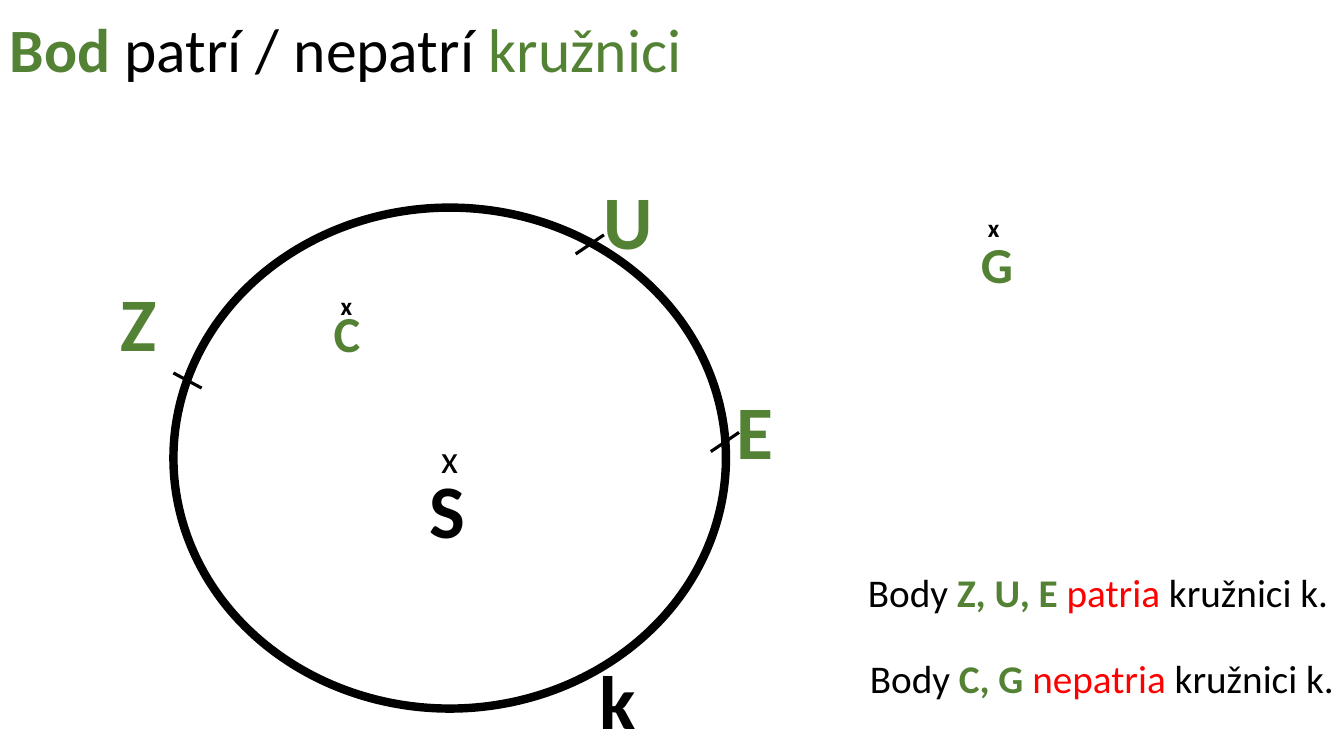
from pptx import Presentation
from pptx.dml.color import RGBColor
from pptx.enum.shapes import MSO_CONNECTOR, MSO_SHAPE
from pptx.enum.text import MSO_ANCHOR, MSO_AUTO_SIZE, PP_ALIGN
from pptx.oxml.ns import qn
from pptx.util import Pt
from lxml import etree

PX = 9144  # 100 px to the inch
FONT = "Calibri"
GREEN = RGBColor(0x54, 0x82, 0x35)
RED = RGBColor(0xFF, 0x00, 0x00)
BLACK = RGBColor(0x00, 0x00, 0x00)
WHITE = RGBColor(0xFF, 0xFF, 0xFF)
ELLIPSE = MSO_SHAPE.OVAL
STRAIGHT = MSO_CONNECTOR.STRAIGHT
MIDDLE = MSO_ANCHOR.MIDDLE
CENTER = PP_ALIGN.CENTER
GROW = MSO_AUTO_SIZE.SHAPE_TO_FIT_TEXT

LETTER_HEIGHT = 101


def px(*lengths):
    return [length * PX for length in lengths]


def add_runs(paragraph, size, runs):
    for text, color, bold in runs:
        run = paragraph.add_run()
        run.text = text
        run.font.name = FONT
        run.font.size = Pt(size)
        run.font.bold = bold
        run.font.color.rgb = color


def add_text(slide, box, size, runs, wrap=False):
    frame = slide.shapes.add_textbox(*px(*box)).text_frame
    frame.word_wrap = wrap
    frame.auto_size = GROW
    add_runs(frame.paragraphs[0], size, runs)
    return frame


def add_title(slide, box):
    title = add_text(slide, box, 44, [
        ("Bod", GREEN, True),
        (" patrí / nepatrí ", BLACK, False),
        ("kružnici", GREEN, False),
    ], wrap=True)
    title.auto_size = MSO_AUTO_SIZE.NONE
    title.vertical_anchor = MIDDLE
    title.paragraphs[0].line_spacing = 0.9


def add_tick(slide, x1, y1, x2, y2):
    tick = slide.shapes.add_connector(STRAIGHT, *px(x1, y1, x2, y2))
    tick.line.color.rgb = BLACK
    tick.line.width = Pt(2.25)
    etree.SubElement(tick._element.spPr, qn("a:effectLst"))


def add_circle(slide, box):
    left, top, _, _ = box

    # Circle k with its centre mark
    circle = slide.shapes.add_shape(ELLIPSE, *px(*box))
    circle.shadow.inherit = False
    circle.fill.solid()
    circle.fill.fore_color.rgb = WHITE
    circle.line.color.rgb = BLACK
    circle.line.width = Pt(6)
    circle.text_frame.vertical_anchor = MIDDLE
    centre = circle.text_frame.paragraphs[0]
    centre.alignment = CENTER
    add_runs(centre, 28, [("x", BLACK, False)])

    # Ticks at U, E and Z
    for x, y, dx, dy in [(399, 46, 28, -19), (533, 242, 28, -19), (0, 164, 28, 15)]:
        add_tick(slide, left + x, top + y, left + x + dx, top + y + dy)

    # Letters, placed from the corner of the circle's box
    for letter, x, y, width, color in [
        ("S", 244, 248, 53, BLACK),
        ("k", 413, 438, 56, BLACK),
        ("E", 549, 170, 49, GREEN),
        ("Z", -62, 63, 53, GREEN),
        ("U", 417, -38, 53, GREEN),
    ]:
        add_text(slide, (left + x, top + y, width, LETTER_HEIGHT), 54,
                 [(letter, color, True)], wrap=letter != "k")


def add_point(slide, box, letter, drop):
    left, top, width, _ = box
    add_text(slide, (left, top, 32, 40), 18, [("x", BLACK, True)])
    add_text(slide, (left - 7, top + drop, width, 71), 36, [(letter, GREEN, True)])


def add_statement(slide, box, points, verb):
    add_text(slide, box, 28, [
        ("Body ", BLACK, False),
        (points + " ", GREEN, True),
        (verb, RED, False),
        (" kružnici k.", BLACK, False),
    ])


def main():
    deck = Presentation()
    deck.slide_width, deck.slide_height = px(1333, 750)
    slide = deck.slides.add_slide(deck.slide_layouts[6])

    add_title(slide, (0, 9, 693, 86))
    add_circle(slide, (172, 206, 548, 497))

    # Points off the circle
    add_point(slide, (328, 283, 47, 83), "C", drop=12)
    add_point(slide, (970, 206, 52, 91), "G", drop=20)

    # Conclusions
    add_statement(slide, (851, 559, 481, 57), "Z, U, E", "patria")
    add_statement(slide, (853, 644, 487, 57), "C, G", "nepatria")

    deck.save("out.pptx")


if __name__ == "__main__":
    main()
